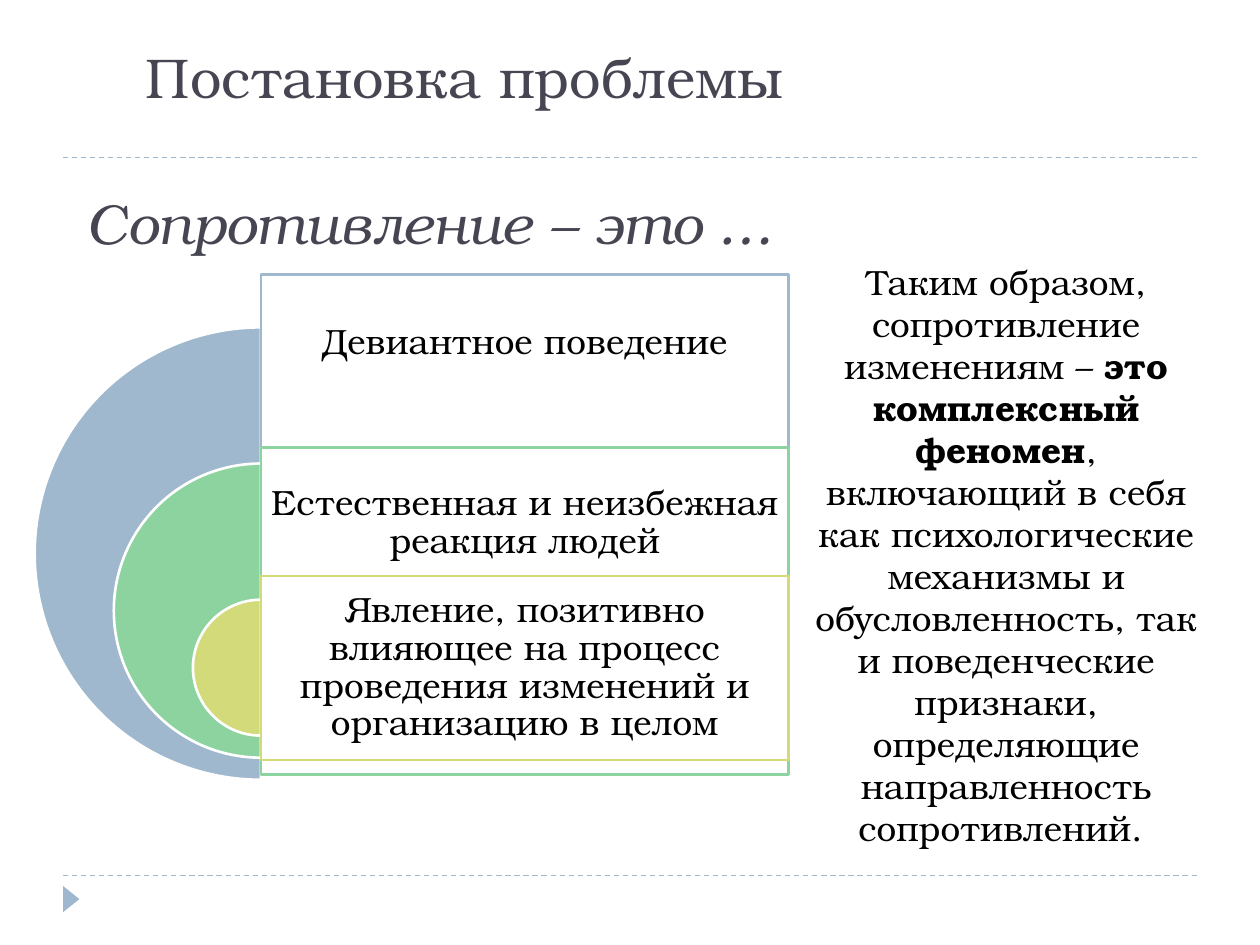
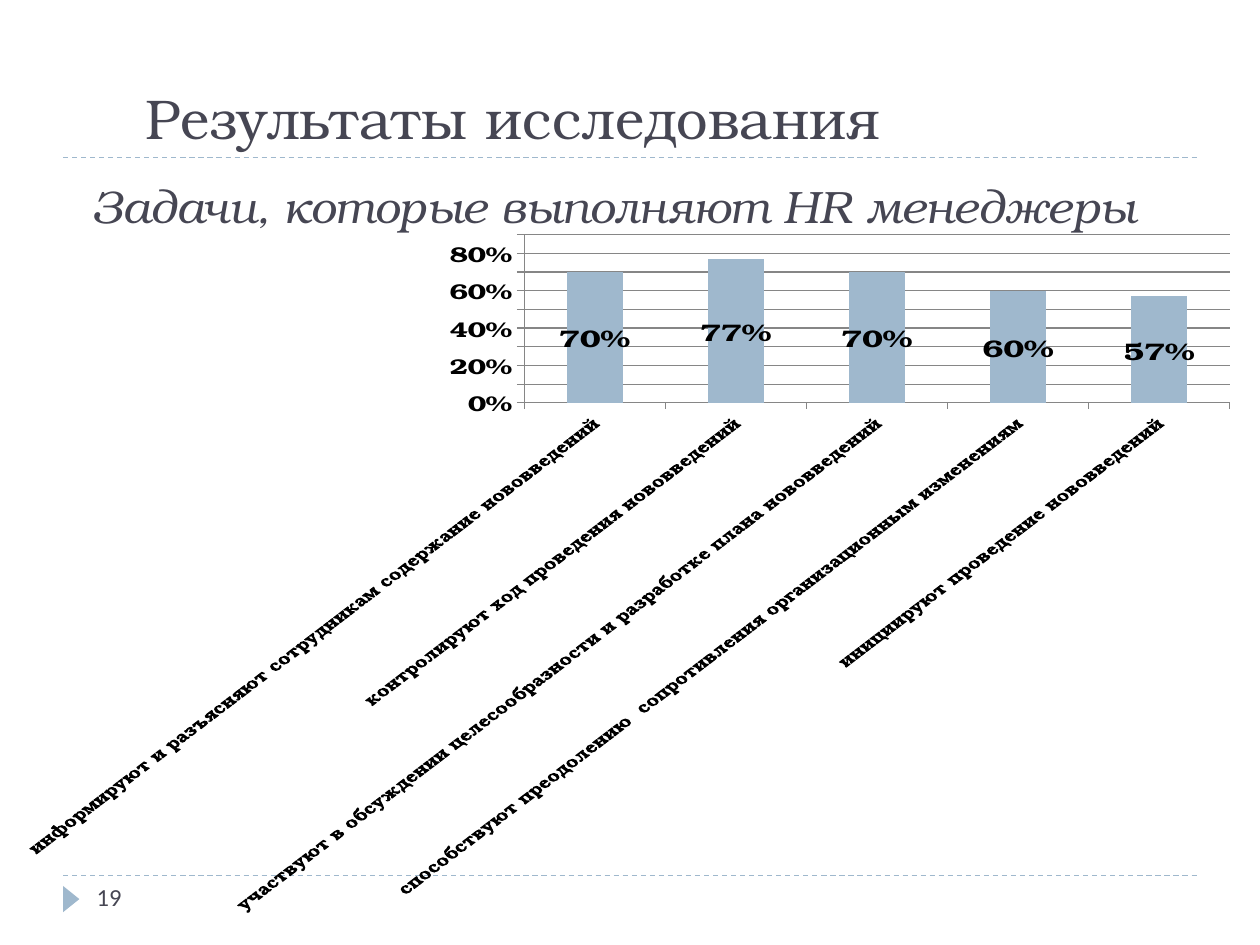
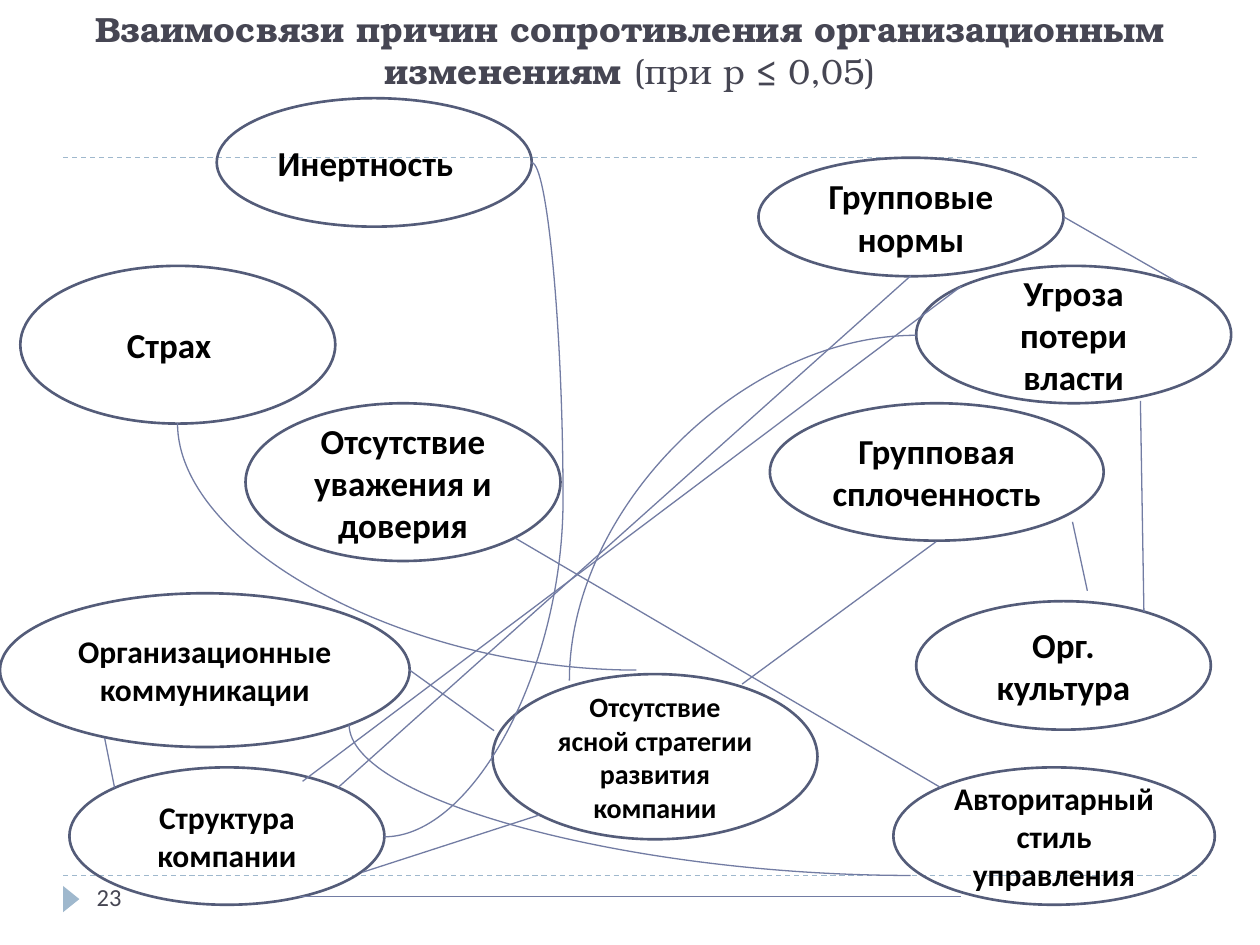
from lxml import etree
from pptx import Presentation
from pptx import util as u
from pptx.chart import data as chart_data
from pptx.dml.color import RGBColor
from pptx.enum import chart as charts, dml, shapes, text
from pptx.oxml.ns import qn

COLORS = {
    "ink": "464653", "black": "000000", "white": "FFFFFF", "blue": "9FB8CD",
    "green": "8DD3A0", "lime": "D2DA7A", "outline": "545C79", "link": "727CA3",
    "grid": "868686",
}
SERIF, SANS = "TeX Gyre Bonum", "Calibri"
TITLE = dict(size=32, color="ink", anchor="bottom")
ALIGN = {"left": text.PP_ALIGN.LEFT, "center": text.PP_ALIGN.CENTER}
ANCHOR = {"top": text.MSO_ANCHOR.TOP, "middle": text.MSO_ANCHOR.MIDDLE,
          "bottom": text.MSO_ANCHOR.BOTTOM}
WIDTH, HEIGHT = 25.4, 19.05


def rgb(name):
    return RGBColor.from_string(COLORS[name])


def cm(*lengths):
    return [u.Cm(length) for length in lengths]


def write(shape, runs, size=20, font=SERIF, color="black", italic=False, bold=False,
          align="left", anchor="top", spacing=None, inset=None, right=None):
    """Fill a shape with one paragraph; runs is a string or (string, bold) pairs."""
    frame = shape.text_frame
    frame.word_wrap = True
    frame.vertical_anchor = ANCHOR[anchor]
    if inset is not None:
        frame.margin_left = frame.margin_right = u.Cm(inset)
        frame.margin_top = frame.margin_bottom = u.Cm(inset)
    if right is not None:
        frame.margin_right = u.Cm(right)
    paragraph = frame.paragraphs[0]
    paragraph.alignment = ALIGN[align]
    if spacing:
        paragraph.line_spacing = spacing
    for words, strong in [(runs, bold)] if isinstance(runs, str) else runs:
        run = paragraph.add_run()
        run.text = words
        run.font.size, run.font.name = u.Pt(size), font
        run.font.bold, run.font.italic = strong, italic
        run.font.color.rgb = rgb(color)


def add_text(slide, box, runs, **style):
    write(slide.shapes.add_textbox(*cm(*box)), runs, **style)


def add_figure(slide, preset, box, fill=None, line=None, opacity=None):
    figure = slide.shapes.add_shape(preset, *cm(*box))
    figure.shadow.inherit = False
    if fill:
        figure.fill.solid()
        figure.fill.fore_color.rgb = rgb(fill)
    else:
        figure.fill.background()
    if opacity:
        tint = figure._element.spPr.find(".//" + qn("a:srgbClr"))
        etree.SubElement(tint, qn("a:alpha")).set("val", str(opacity * 1000))
    if line:
        figure.line.color.rgb = rgb(line)
        figure.line.width = u.Pt(1.5)
    else:
        figure.line.fill.background()
    return figure


def add_line(slide, start, end, color="link", kind=shapes.MSO_CONNECTOR.STRAIGHT, dashed=False):
    line = slide.shapes.add_connector(kind, *cm(*start, *end))
    line.line.color.rgb = rgb(color)
    line.line.width = u.Pt(0.75)
    if dashed:
        line.line.dash_style = dml.MSO_LINE.DASH
    etree.SubElement(line._element.spPr, qn("a:effectLst"))
    return line


def add_page(deck, number=None):
    """Blank slide with the two dashed rules, the marker and the page number."""
    slide = deck.slides.add_slide(deck.slide_layouts[6])
    for y in (17.65, 3.18):
        add_line(slide, (1.27, y), (WIDTH - 1.27, y), "blue", dashed=True)
    marker = add_figure(slide, shapes.MSO_SHAPE.ISOSCELES_TRIANGLE,
                        (1.17, 17.96, 0.53, 0.33), "blue")
    marker.rotation = 90
    if number:
        add_text(slide, (1.7, 17.65, 5.51, 1.02), number, size=14, font=SANS, color="ink")
    return slide


# Nested half discs, each with a labelled panel
def draw_definitions(slide, box):
    left, top, width, _ = box
    axis = left + 4.55
    panel_width = width - 4.55
    definitions = [  # text, colour, panel top, panel height, label height
        ("Девиантное поведение", "blue", 0, 9.12, 2.74),
        ("Естественная и неизбежная реакция людей", "green", 3.48, 6.6, 3.05),
        ("Явление, позитивно влияющее на процесс проведения изменений и "
         "организацию в целом", "lime", 6.07, 3.71, 3.71),
    ]
    for level, (words, color, offset, height, label_height) in enumerate(definitions):
        diameter = 9.12 - 3.19 * level
        disc = add_figure(slide, shapes.MSO_SHAPE.PIE,
                          (axis - diameter / 2, top + 1.06 + 2.745 * level, diameter, diameter),
                          color, "white")
        disc.adjustments[0], disc.adjustments[1] = 54, 162
        add_figure(slide, shapes.MSO_SHAPE.RECTANGLE,
                   (axis, top + offset, panel_width, height), "white", color, opacity=90)
        add_text(slide, (axis, top + offset, panel_width, label_height), words,
                 align="center", anchor="middle", spacing=0.9, inset=0.2)


def build_problem(deck):
    slide = add_page(deck)
    add_text(slide, (1.5, 3.53, 22.86, 1.75), "Сопротивление – это …", italic=True, **TITLE)
    add_text(slide, (15.88, 5.13, 8.81, 11.38), [
        ("Таким образом, сопротивление изменениям – ", False),
        ("это комплексный феномен", True),
        (", включающий в себя как психологические механизмы и обусловленность, так и "
         "поведенческие признаки, определяющие направленность сопротивлений. ", False),
    ], align="center")
    add_text(slide, (2.69, 0.74, 21.44, 1.9), "Постановка проблемы", size=32, color="ink")
    draw_definitions(slide, (0.71, 5.54, 15.19, 10.08))


# Column chart of the tasks
def draw_tasks(slide, box):
    tasks = chart_data.CategoryChartData(number_format="0%")
    tasks.categories = [
        "информируют и разъясняют сотрудникам содержание нововведений",
        "контролируют ход проведения нововведений",
        "участвуют в обсуждении целесообразности и разработке плана нововведений",
        "способствуют преодолению  сопротивления организационным изменениям",
        "инициируют проведение нововведений",
    ]
    tasks.add_series("Series 1", (0.7, 0.77, 0.7, 0.6, 0.57))
    chart = slide.shapes.add_chart(charts.XL_CHART_TYPE.COLUMN_STACKED, *cm(*box), tasks).chart
    chart.has_legend = chart.has_title = False
    chart.font.name, chart.font.size, chart.font.bold = SERIF, u.Pt(18), True
    chart.font.color.rgb = rgb("black")

    for axis, size in ((chart.category_axis, 12), (chart.value_axis, 16)):
        axis.tick_labels.font.size = u.Pt(size)
        axis.tick_labels.font.bold = True
        axis.major_tick_mark = charts.XL_TICK_MARK.OUTSIDE
        axis.format.line.color.rgb = rgb("grid")
    shares = chart.value_axis
    shares.tick_labels.number_format = "0%"
    shares.tick_labels.number_format_is_linked = False
    shares.has_major_gridlines = True
    shares.major_gridlines.format.line.color.rgb = rgb("grid")

    plot = chart.plots[0]
    plot.gap_width, plot.overlap, plot.vary_by_categories = 150, 100, False
    columns = plot.series[0]
    columns.format.fill.solid()
    columns.format.fill.fore_color.rgb = rgb("blue")
    labels = columns.data_labels
    labels.show_value = True
    labels.number_format, labels.number_format_is_linked = "0%", False
    labels.position = charts.XL_LABEL_POSITION.CENTER


def build_results(deck):
    slide = add_page(deck, "19")
    add_text(slide, (2.69, 0.43, 21.44, 2.74), "Результаты исследования", **TITLE)
    add_text(slide, (0.71, 3.53, 23.6, 1.3), "Задачи, которые выполняют HR менеджеры ",
             size=25.9, color="ink", italic=True, align="center", anchor="bottom", spacing=0.9)
    draw_tasks(slide, (0, 4.52, WIDTH, 13.92))


# Map of causes and the links between them
def draw_causes(slide, box):
    left, top = box[:2]
    causes = [  # text, size, place, right inset
        ("Инертность", 20, (4.37, 1.98, 6.35, 2.59), 0.6),
        ("Отсутствие уважения и доверия", 20, (4.95, 8.13, 6.35, 3.18), None),
        ("Страх", 20, (0.41, 5.36, 6.35, 3.18), 0.6),
        ("Угроза потери власти", 20, (18.47, 5.36, 6.35, 2.77), None),
        ("Групповые нормы", 20, (15.29, 3.18, 6.15, 2.39), None),
        ("Групповая сплоченность", 20, (15.52, 8.13, 6.73, 2.77), None),
        ("Отсутствие ясной стратегии развития компании", 16, (9.93, 13.59, 6.55, 3.33), None),
        ("Организационные коммуникации", 18, (0, 11.96, 8.26, 3.1), None),
        ("Структура компании", 18, (1.4, 15.47, 6.35, 2.77), None),
        ("Орг. культура", 20, (18.47, 12.12, 5.94, 2.59), None),
        ("Авторитарный стиль управления", 18, (18.01, 15.47, 6.48, 2.77), None),
    ]
    for words, size, (x, y, width, height), right in causes:
        cause = add_figure(slide, shapes.MSO_SHAPE.OVAL,
                           (left + x, top + y, width, height), line="outline")
        write(cause, words, size=size, font=SANS, bold=True, align="center",
              anchor="middle", right=right)

    straight_links = [
        (10.39, 10.85, 18.97, 15.88), (21.62, 10.52, 21.92, 11.91),
        (18.87, 10.92, 14.96, 13.79), (21.44, 4.37, 23.88, 5.77),
        (18.36, 5.56, 6.81, 15.88), (22.99, 8.08, 23.06, 12.34),
        (19.38, 5.77, 6.1, 15.75), (7.32, 17.58, 10.87, 16.43),
        (6.05, 18.08, 19.38, 18.08), (2.11, 14.88, 2.31, 15.88),
        (8.26, 13.51, 9.96, 14.73),
    ]
    for x1, y1, x2, y2 in straight_links:
        add_line(slide, (left + x1, top + y1), (left + x2, top + y2))

    curved_links = [  # ends, bulge of a double bend
        (12.83, 13.51, 3.58, 8.53, None), (18.47, 6.76, 11.48, 13.72, None),
        (18.36, 17.65, 7.04, 14.61, None), (10.72, 3.28, 7.75, 16.87, -21300),
    ]
    for x1, y1, x2, y2, bulge in curved_links:
        link = add_line(slide, (left + x1, top + y1), (left + x2, top + y2),
                        kind=shapes.MSO_CONNECTOR.CURVE)
        geometry = link._element.spPr.find(qn("a:prstGeom"))
        if bulge is None:
            geometry.set("prst", "curvedConnector2")
        else:
            guide = etree.SubElement(geometry.find(qn("a:avLst")), qn("a:gd"))
            guide.set("name", "adj1")
            guide.set("fmla", f"val {bulge}")


def build_relations(deck):
    slide = add_page(deck, "23")
    add_text(slide, (1.27, 0.43, 22.86, 1.55), [
        ("Взаимосвязи причин сопротивления организационным изменениям ", True),
        ("(при p ≤ 0,05)", False),
    ], color="ink", align="center", anchor="bottom")
    draw_causes(slide, (0, 0, WIDTH, HEIGHT))


def main():
    deck = Presentation()
    deck.slide_width, deck.slide_height = cm(WIDTH, HEIGHT)
    build_problem(deck)
    build_results(deck)
    build_relations(deck)
    deck.save("out.pptx")


if __name__ == "__main__":
    main()
